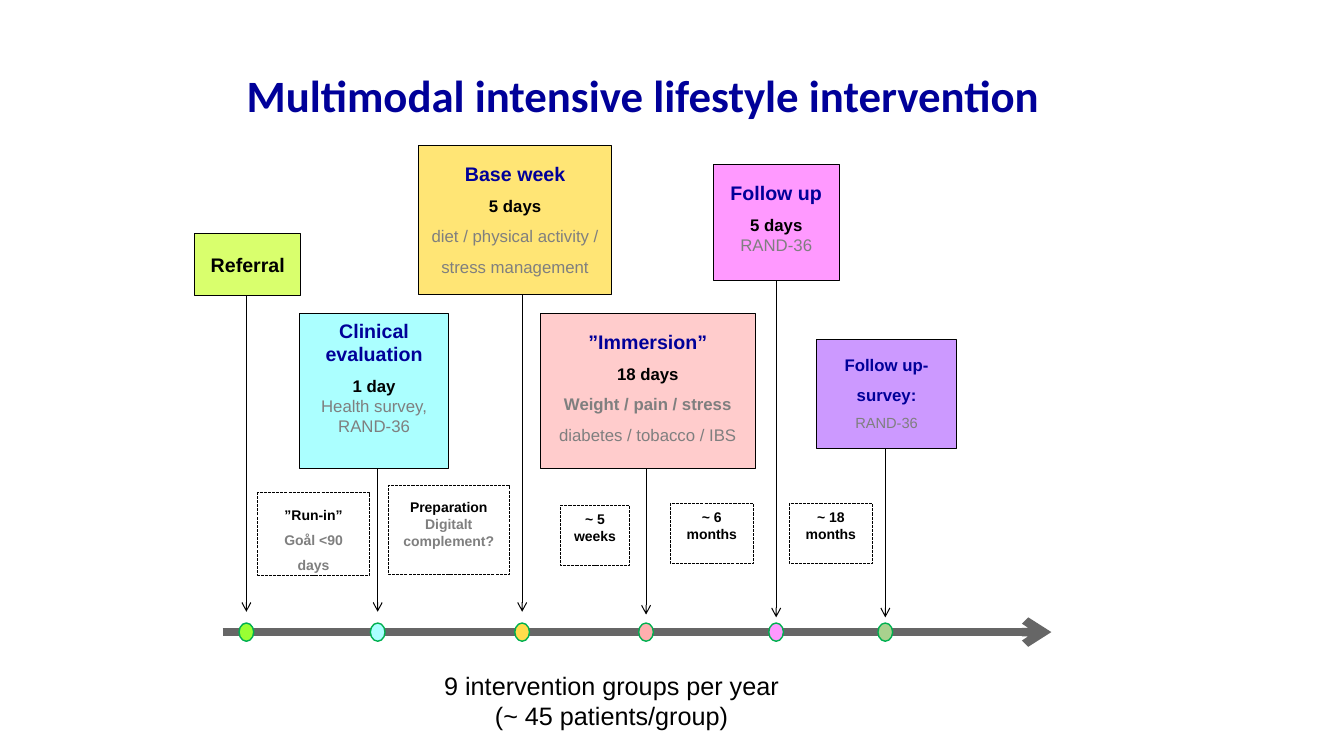
"""Build the timeline slide for a multimodal intensive lifestyle intervention."""
from dataclasses import dataclass

from lxml.etree import SubElement
from pptx import Presentation
from pptx.dml.color import RGBColor
from pptx.enum.dml import MSO_LINE
from pptx.enum.shapes import MSO_CONNECTOR, MSO_SHAPE
from pptx.enum.text import MSO_ANCHOR, PP_ALIGN
from pptx.oxml.ns import qn
from pptx.util import Pt


@dataclass(frozen=True)
class Theme:
    navy: str = "000099"
    black: str = "000000"
    gray: str = "7F7F7F"
    white: str = "FFFFFF"
    axis: str = "666666"
    dot_line: str = "00B050"
    green: str = "D9FF6D"
    cyan: str = "ABFFFF"
    yellow: str = "FFE575"
    rose: str = "FFCCCC"
    pink: str = "FF99FF"
    violet: str = "CC99FF"
    green_dot: str = "99FF33"
    yellow_dot: str = "FFDD4B"
    rose_dot: str = "FFAFAF"
    sage_dot: str = "A9D18E"
    title_size: float = 32
    footer_size: float = 18
    heading_size: float = 14
    body_size: float = 12
    survey_size: float = 10.5
    gap_size: float = 10


theme = Theme()
title_style = (theme.title_size, theme.navy, True)
footer_style = (theme.footer_size, theme.black, False)
heading = (theme.heading_size, theme.navy, True)
referral = (theme.heading_size, theme.black, True)
duration = (theme.body_size, theme.black, True)
detail = (theme.body_size, theme.gray, False)
strong_detail = (theme.body_size, theme.gray, True)
survey_heading = (theme.body_size, theme.navy, True)
survey_detail = (theme.survey_size, theme.gray, False)
gap = (theme.gap_size, theme.black, True)
gap_note = (theme.gap_size, theme.gray, True)


def write_text(shape, paragraphs, anchor=MSO_ANCHOR.TOP, wrap=True, font_name="Arial"):
    frame = shape.text_frame
    frame.word_wrap = wrap
    frame.vertical_anchor = anchor
    for index, (spacing, runs) in enumerate(paragraphs):
        paragraph = frame.add_paragraph() if index else frame.paragraphs[0]
        paragraph.alignment = PP_ALIGN.CENTER
        paragraph.line_spacing = spacing
        for text, (size, color, bold) in runs:
            run = paragraph.add_run()
            run.text = text
            run.font.name = font_name
            run.font.size = Pt(size)
            run.font.bold = bold
            run.font.color.rgb = RGBColor.from_string(color)


def add_arrow(start_x, start_y, end_x, end_y, color, width):
    arrow = slide.shapes.add_connector(
        MSO_CONNECTOR.STRAIGHT, Pt(start_x), Pt(start_y), Pt(end_x), Pt(end_y))
    arrow.line.color.rgb = RGBColor.from_string(color)
    arrow.line.width = Pt(width)
    SubElement(arrow.line._get_or_add_ln(), qn("a:tailEnd"), type="arrow")
    SubElement(arrow._element.spPr, qn("a:effectLst"))


presentation = Presentation()
presentation.slide_width = Pt(960)
presentation.slide_height = Pt(540)
slide = presentation.slides.add_slide(presentation.slide_layouts[6])

title = slide.shapes.add_textbox(Pt(160.5), Pt(44.6), Pt(598), Pt(46))
write_text(title, [(1, [("Multimodal intensive lifestyle intervention", title_style)])],
           MSO_ANCHOR.MIDDLE, font_name="Calibri")

footer = slide.shapes.add_textbox(Pt(309), Pt(475.2), Pt(255.6), Pt(51))
write_text(footer, [(1, [("9 intervention groups per year", footer_style)]),
                    (1, [("(~ 45 patients/group)", footer_style)])], wrap=False)

axis_y = 451.5
add_arrow(159, axis_y, 751, axis_y, theme.axis, 6)

milestones = [
    (176, 437, theme.green_dot, (139, 167, 76, 44), theme.green,
     [(1, [("Referral", referral)])]),
    (269.8, 437, theme.cyan, (214, 224, 106.5, 111), theme.cyan,
     [(1, [("Clinical evaluation", heading)]),
      (1.5, [("1 day", duration)]),
      (1, [("Health survey, RAND-36", detail)])]),
    (373, 437, theme.yellow_dot, (299, 104, 138, 106.5), theme.yellow,
     [(1.5, [("Base week", heading)]),
      (1.5, [("5 days", duration)]),
      (1.5, [("diet / physical activity / stress management", detail)])]),
    (461.5, 439, theme.rose_dot, (386, 224, 153.5, 111), theme.rose,
     [(1.5, [("”Immersion”", heading)]),
      (1.5, [("18 days", duration)]),
      (1.5, [("Weight / pain / stress ", strong_detail),
             ("diabetes / tobacco / IBS", detail)])]),
    (554.4, 441, theme.pink, (509.5, 117.3, 90, 83.2), theme.pink,
     [(1.5, [("Follow up", heading)]),
      (1.5, [("5 days", duration)]),
      (1, [("RAND-36", detail)])]),
    (632.4, 441, theme.sage_dot, (583.3, 242.5, 100, 78), theme.violet,
     [(1.5, [("Follow up-survey:", survey_heading)]),
      (1.5, [("RAND-36", survey_detail)])]),
]
intervals = [
    ((184, 352, 80, 58.8),
     [(1.5, [("”Run-in”", gap)]), (1.5, [("Goål <90 days", gap_note)])]),
    ((277.3, 346.6, 86.5, 64),
     [(1.5, [("Preparation", gap)]), (1, [("Digitalt complement?", gap_note)])]),
    ((400.3, 361, 49.5, 43.2), [(1, [("~ 5", gap)]), (1, [("weeks", gap)])]),
    ((478.8, 359.6, 59.3, 43.2), [(1, [("~ 6 months", gap)])]),
    ((563.8, 359.6, 59.3, 43.2), [(1, [("~ 18 months", gap)])]),
]

dot_width, dot_height = 10.5, 13
for center_x, arrow_end, dot_color, (left, top, width, height), fill, paragraphs in milestones:
    add_arrow(center_x, top + height, center_x, arrow_end, theme.black, 0.75)
    dot = slide.shapes.add_shape(
        MSO_SHAPE.OVAL, Pt(center_x - dot_width / 2), Pt(axis_y - dot_height / 2),
        Pt(dot_width), Pt(dot_height))
    dot.shadow.inherit = False
    dot.fill.solid()
    dot.fill.fore_color.rgb = RGBColor.from_string(dot_color)
    dot.line.color.rgb = RGBColor.from_string(theme.dot_line)
    dot.line.width = Pt(1)

boxes = [(bounds, fill, paragraphs, False) for _, _, _, bounds, fill, paragraphs in milestones]
boxes += [(bounds, theme.white, paragraphs, True) for bounds, paragraphs in intervals]
for bounds, fill, paragraphs, dashed in boxes:
    box = slide.shapes.add_shape(MSO_SHAPE.RECTANGLE, *map(Pt, bounds))
    box.shadow.inherit = False
    box.fill.solid()
    box.fill.fore_color.rgb = RGBColor.from_string(fill)
    box.line.color.rgb = RGBColor.from_string(theme.black)
    box.line.width = Pt(0.75)
    if dashed:
        box.line.dash_style = MSO_LINE.SQUARE_DOT
    anchor = MSO_ANCHOR.MIDDLE if fill == theme.green else MSO_ANCHOR.TOP
    write_text(box, paragraphs, anchor)

presentation.save("out.pptx")
